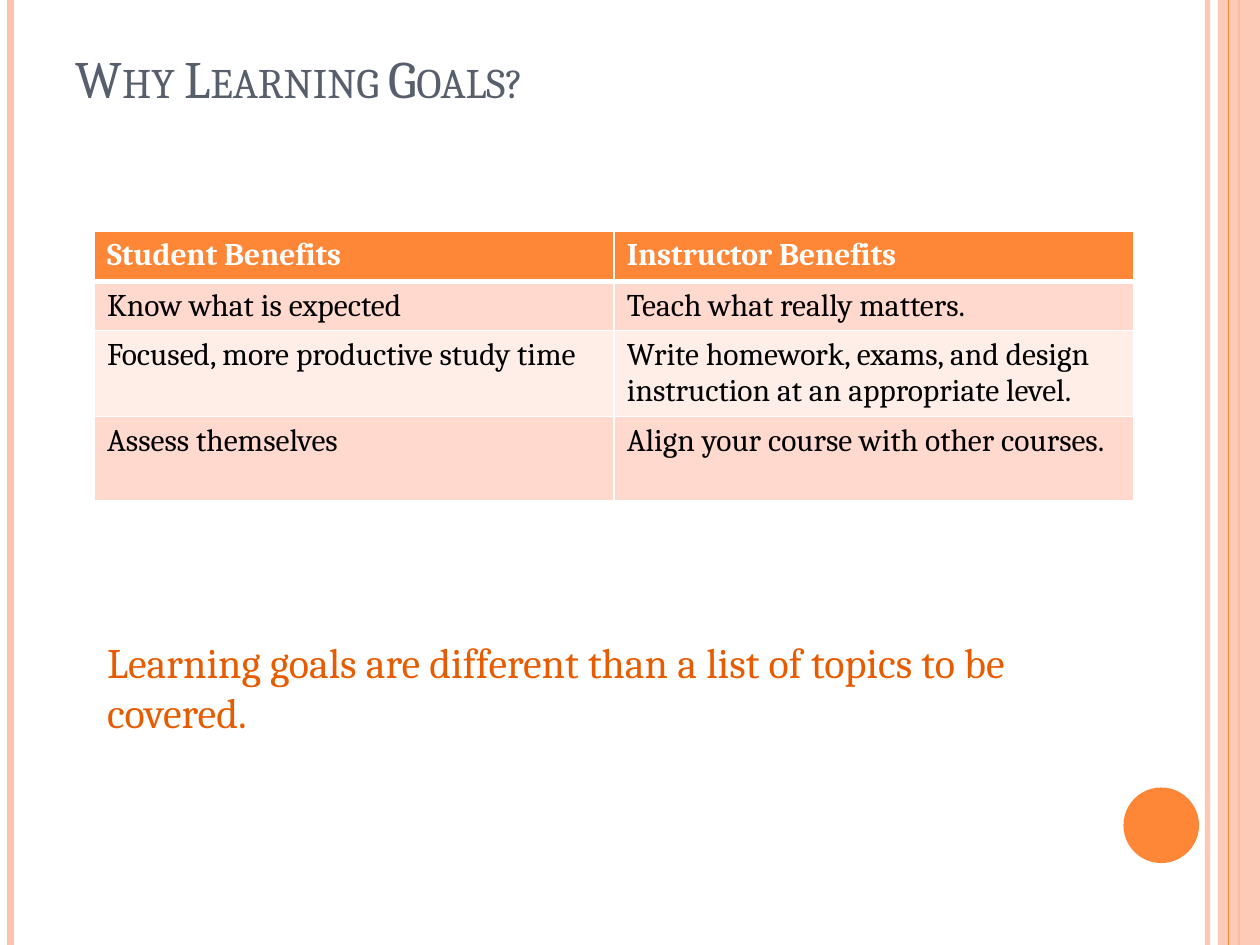
import pptx
import pptx.dml.color
import pptx.enum.shapes
import pptx.enum.text
import pptx.oxml
import pptx.oxml.ns
import pptx.util

HUES = {
    "white": "FFFFFF", "black": "000000", "slate": "575F6D",
    "orange": "FE8637", "rust": "E75C01", "peach": "FEC3AE",
    "blush": "FFD9CE", "pale": "FFEDE8",
}
COLS, ROWS = 120, 90
ANCHOR = pptx.enum.text.MSO_ANCHOR
KIND = pptx.enum.shapes.MSO_SHAPE


def rgb(hue):
    return pptx.dml.color.RGBColor.from_string(HUES[hue])


def add_xml(root, tag, **attrs):
    node = pptx.oxml.ns.qn(tag)
    part = root.makeelement(node, attrs)
    root.append(part)
    return part


def fade(shape, share):
    """Make the first colour of a shape's fill or line partly opaque."""
    tone = shape._element.spPr.find(".//" + pptx.oxml.ns.qn("a:srgbClr"))
    add_xml(tone, "a:alpha", val=str(share * 1000))


class Deck:
    """Holds the style and the current slide, on a 120 by 90 grid."""

    face = "Cambria"

    def __init__(self):
        self.show = pptx.Presentation()
        self.show.slide_width = pptx.util.Inches(10)
        self.show.slide_height = pptx.util.Inches(7.5)
        self.slide = self.show.slides.add_slide(self.show.slide_layouts[1])
        self.shapes = self.slide.shapes

    def across(self, cols):
        return round(self.show.slide_width * cols / COLS)

    def down(self, rows):
        return round(self.show.slide_height * rows / ROWS)

    def box(self, left, top, width, height):
        return (self.across(left), self.down(top),
                self.across(width), self.down(height))

    def label(self, para, text, size, hue, bold=False):
        run = para.add_run()
        run.text = text
        form = {"name": self.face, "size": pptx.util.Pt(size), "bold": bold}
        for key, value in form.items():
            setattr(run.font, key, value)
        run.font.color.rgb = rgb(hue)
        return run

    def rule(self, col, hue, width, share=100):
        """Draw a line down the full height of the slide."""
        line = self.shapes.add_connector(
            pptx.enum.shapes.MSO_CONNECTOR.STRAIGHT,
            self.across(col), 0, self.across(col), self.down(ROWS))
        line.line.color.rgb = rgb(hue)
        line.line.width = pptx.util.Pt(width)
        add_xml(line._element.spPr, "a:effectLst")
        if share < 100:
            fade(line, share)

    def shape(self, kind, place, hue, share=100):
        shape = self.shapes.add_shape(kind, *self.box(*place))
        shape.shadow.inherit = False
        shape.fill.solid()
        shape.fill.fore_color.rgb = rgb(hue)
        shape.line.fill.background()
        if share < 100:
            fade(shape, share)

    def holder(self, index, place, anchor, text, size, hue):
        """Move and fill a template placeholder; return paragraph and run."""
        item = self.slide.placeholders[index]
        for key, value in zip(("left", "top", "width", "height"),
                              self.box(*place)):
            setattr(item, key, value)
        form = {"word_wrap": True, "vertical_anchor": anchor,
                "auto_size": pptx.enum.text.MSO_AUTO_SIZE.NONE}
        for key, value in form.items():
            setattr(item.text_frame, key, value)
        para = item.text_frame.paragraphs[0]
        para.alignment = pptx.enum.text.PP_ALIGN.LEFT
        return para, self.label(para, text, size, hue)

    def title(self, place, text):
        _, run = self.holder(0, place, ANCHOR.BOTTOM, text, 30, "slate")
        run.font._element.set("cap", "small")

    def body(self, place, text):
        para, _ = self.holder(1, place, ANCHOR.TOP, text, 24, "rust")
        para.space_before = pptx.util.Pt(6)
        props = para._p.get_or_add_pPr()
        props.set("marL", "0")
        props.set("indent", "0")
        add_xml(props, "a:buNone")

    def edge(self, cell, widths):
        props = cell._tc.get_or_add_tcPr()
        for side, width in widths.items():
            line = add_xml(props, "a:ln" + side,
                           w=str(pptx.util.Pt(width)))
            fill = add_xml(line, "a:solidFill")
            add_xml(fill, "a:srgbClr", val=HUES["white"])

    def table(self, left, top, width, heights, data):
        frame = self.shapes.add_table(
            len(data), len(data[0]),
            *self.box(left, top, width, sum(heights)))
        grid = frame.table
        for r, (texts, height) in enumerate(zip(data, heights)):
            grid.rows[r].height = self.down(height)
            head = r == 0
            fill = "orange" if head else ("pale", "blush")[r % 2]
            ink = "white" if head else "black"
            edges = {"L": 1, "R": 1, "T": 3 if r == 1 else 1,
                     "B": 3 if head else 1}
            for c, text in enumerate(texts):
                cell = grid.cell(r, c)
                self.edge(cell, edges)
                cell.fill.solid()
                cell.fill.fore_color.rgb = rgb(fill)
                self.label(cell.text_frame.paragraphs[0],
                           text, 18, ink, head)


def main():
    deck = Deck()
    deck.rule(115, "peach", 3, 93)
    deck.rule(1, "peach", 4.5)
    deck.rule(118, "orange", 1.5)
    deck.shape(KIND.RECTANGLE, (116, 0, 4, ROWS), "peach", 87)
    deck.rule(117, "orange", 0.75)
    deck.shape(KIND.OVAL, (107, 75, 7.2, 7.2), "orange")
    deck.title((6, 3.6, 98, 7.4), "Why Learning Goals?")
    deck.body((9, 60, 102, 12), "Learning goals are different than "
              "a list of topics to be covered.")
    deck.table(9, 22, 99, (4.8, 4.6, 8.2, 8), (
        ("Student Benefits", "Instructor Benefits"),
        ("Know what is expected", "Teach what really matters."),
        ("Focused, more productive study time",
         "Write homework, exams, and design instruction "
         "at an appropriate level."),
        ("Assess themselves", "Align your course with other courses."),
    ))
    deck.show.save("out.pptx")


if __name__ == "__main__":
    main()
